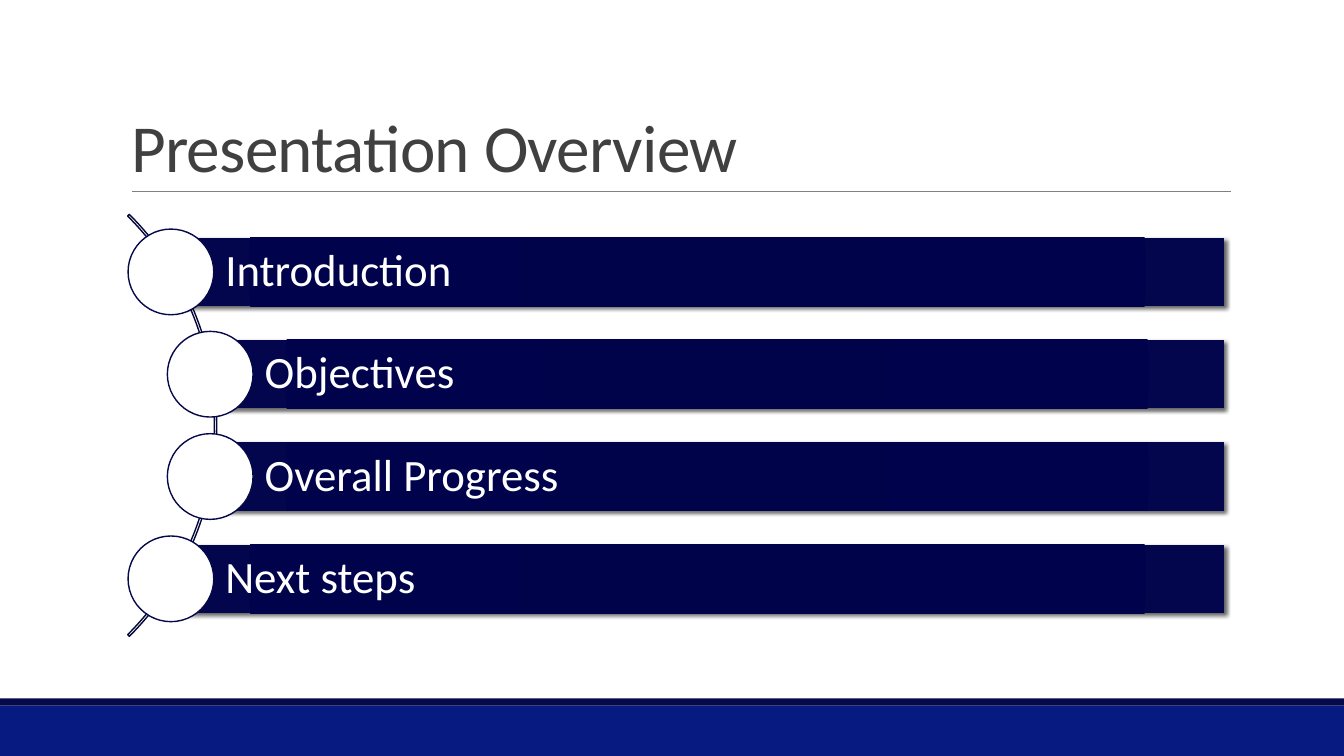
from pptx import Presentation
from pptx.dml.color import RGBColor
from pptx.enum.shapes import MSO_CONNECTOR, MSO_SHAPE
from pptx.enum.text import MSO_ANCHOR, PP_ALIGN
from pptx.oxml import parse_xml
from pptx.oxml.ns import nsdecls
from pptx.util import Inches, Pt

RECTANGLE = MSO_SHAPE.RECTANGLE
OVAL = MSO_SHAPE.OVAL
BLOCK_ARC = MSO_SHAPE.BLOCK_ARC
STRAIGHT = MSO_CONNECTOR.STRAIGHT
LEFT = PP_ALIGN.LEFT
MIDDLE = MSO_ANCHOR.MIDDLE
BOTTOM = MSO_ANCHOR.BOTTOM

SLIDE_WIDTH, SLIDE_HEIGHT = 13.33, 7.5
TITLE_BOX = (1.2, 0.31, 11, 1.59)
AGENDA_BOX = (1.27, 2.19, 10.87, 4.06)
FOOTER_BOX = (0, 6.93, SLIDE_WIDTH, 0.57)

AGENDA = [
    ("Introduction", 0),
    ("Objectives", 0.39),
    ("Overall Progress", 0.39),
    ("Next steps", 0),
]
BAR_HEIGHT = 0.68
CIRCLE_SIZE = 0.85
ARC_SIZE = 5.92
ARC_OFFSET = 5.04
BAR_STOPS = [(0, "00034A"), (34, "00034A"), (70, "00034B"), (100, "03064C")]

TITLE_FRAME = {"vertical_anchor": BOTTOM, "word_wrap": True}
BAR_FRAME = {
    "vertical_anchor": MIDDLE,
    "word_wrap": True,
    "margin_left": Inches(0.54),
    "margin_right": Inches(0.09),
    "margin_top": Inches(0.09),
    "margin_bottom": Inches(0.09),
}
TITLE_FONT = {"name": "Calibri", "size": Pt(48), "bold": False}
BAR_FONT = {"name": "Calibri", "size": Pt(32)}


def color(value):
    return RGBColor.from_string(value)


def set_attributes(target, values):
    for name, value in values.items():
        setattr(target, name, value)


def write_text(shape, text, frame_format, font_format, font_color, spacing):
    frame = shape.text_frame
    set_attributes(frame, frame_format)
    paragraph = frame.paragraphs[0]
    set_attributes(paragraph, {"alignment": LEFT, "line_spacing": spacing})
    run = paragraph.add_run()
    run.text = text
    set_attributes(run.font, font_format)
    run.font.color.rgb = color(font_color)
    return run


def add_plain_shape(slide, kind, box, fill=None, line=None):
    shape = slide.shapes.add_shape(kind, *map(Inches, box))
    shape.shadow.inherit = False
    if fill:
        shape.fill.solid()
        shape.fill.fore_color.rgb = color(fill)
    else:
        shape.fill.background()
    if line:
        shape.line.color.rgb = color(line)
        shape.line.width = Pt(1)
    else:
        shape.line.fill.background()
    return shape


def add_bar_effects(bar):
    properties = bar._element.spPr
    stops = "".join(
        f'<a:gs pos="{position * 1000}"><a:srgbClr val="{value}"/></a:gs>'
        for position, value in BAR_STOPS
    )
    gradient = parse_xml(
        f'<a:gradFill {nsdecls("a")} rotWithShape="1"><a:gsLst>{stops}</a:gsLst>'
        '<a:path path="circle"><a:fillToRect l="100000" t="100000" '
        'r="100000" b="100000"/></a:path></a:gradFill>'
    )
    properties.replace(properties.find("{*}solidFill"), gradient)
    shadow = parse_xml(
        f'<a:outerShdw {nsdecls("a")} blurRad="{Pt(3)}" dist="{Pt(2)}" '
        'dir="2700000" rotWithShape="0"><a:srgbClr val="000000">'
        '<a:alpha val="60000"/></a:srgbClr></a:outerShdw>'
    )
    properties.find("{*}effectLst").append(shadow)


def add_footer(slide, box):
    left, top, width, height = box
    edge = 0.07
    add_plain_shape(slide, RECTANGLE, (left, top + edge, width, height - edge), "061A81")
    add_plain_shape(slide, RECTANGLE, (left, top, width, edge), "060949")


def add_title(slide, box):
    left, top, width, height = box
    rule_left, rule_right, rule_top = left + 0.11, left + width + 0.01, top + height
    rule = slide.shapes.add_connector(
        STRAIGHT, *map(Inches, (rule_left, rule_top, rule_right, rule_top))
    )
    rule.line.color.rgb = color("808080")
    rule.line.width = Pt(0.5)
    rule._element.spPr.append(parse_xml(f'<a:effectLst {nsdecls("a")}/>'))

    title = slide.shapes.title
    for name, value in zip(("left", "top", "width", "height"), box):
        setattr(title, name, Inches(value))
    run = write_text(
        title, "Presentation Overview", TITLE_FRAME, TITLE_FONT, "404040", 0.85
    )
    run.font._element.set("spc", "-50")


def add_agenda(slide, box):
    left, top, width, height = box
    arc_box = (left - ARC_OFFSET, top + (height - ARC_SIZE) / 2, ARC_SIZE, ARC_SIZE)
    arc = add_plain_shape(slide, BLOCK_ARC, arc_box, line="05073A")
    for index, value in enumerate((189, 27, 0.004)):
        arc.adjustments[index] = value

    pitch = height / len(AGENDA)
    radius = CIRCLE_SIZE / 2
    for index, (text, indent) in enumerate(AGENDA):
        middle = top + (index + 0.5) * pitch
        circle_left = left + indent
        bar_left = circle_left + radius
        bar_box = (bar_left, middle - BAR_HEIGHT / 2, left + width - bar_left, BAR_HEIGHT)
        bar = add_plain_shape(slide, RECTANGLE, bar_box, BAR_STOPS[0][1])
        add_bar_effects(bar)
        write_text(bar, text, BAR_FRAME, BAR_FONT, "FFFFFF", 0.9)
        circle_box = (circle_left, middle - radius, CIRCLE_SIZE, CIRCLE_SIZE)
        add_plain_shape(slide, OVAL, circle_box, "FFFFFF", "060949")


def main():
    presentation = Presentation()
    presentation.slide_width = Inches(SLIDE_WIDTH)
    presentation.slide_height = Inches(SLIDE_HEIGHT)
    slide = presentation.slides.add_slide(presentation.slide_layouts[5])
    add_footer(slide, FOOTER_BOX)
    add_title(slide, TITLE_BOX)
    add_agenda(slide, AGENDA_BOX)
    presentation.save("out.pptx")


if __name__ == "__main__":
    main()
